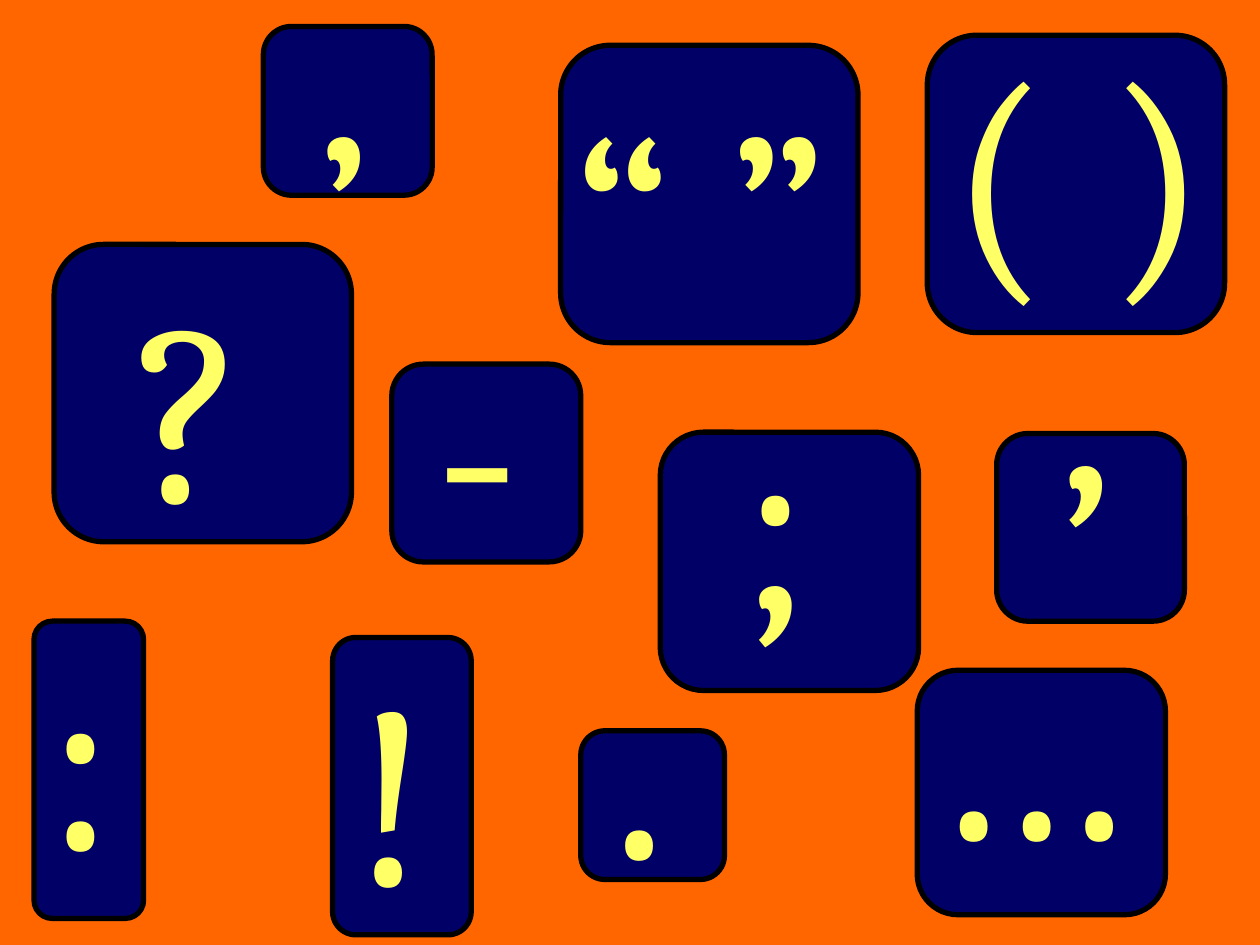
"""Build a slide of punctuation marks on rounded cards."""
from dataclasses import dataclass

from pptx import Presentation
from pptx import util as u
from pptx.dml.color import RGBColor
from pptx.enum import shapes, text


@dataclass(frozen=True)
class Theme:
    """Colours, type and line sizes of the slide."""
    background: str = "FF6600"
    card: str = "000066"
    outline: str = "000000"
    mark: str = "FFFF66"
    font: str = "Cambria"
    mark_size: int = 150
    outline_width: int = 3
    corner: float = 0.167


THEME = Theme()
SLIDE_WIDTH, SLIDE_HEIGHT = u.Inches(10), u.Inches(7.5)
COLUMNS = 100
CELL = SLIDE_WIDTH / COLUMNS
MARK_WIDTH, MARK_HEIGHT = 14.9, 26

# Mark, card (column, row, columns, rows), mark box (column, row, columns)
CARDS = [
    ("!", (26.4, 50.6, 11, 23.6), (27.2, 49, MARK_WIDTH)),
    (".", (46.1, 58, 11.4, 11.8), (47.6, 46.9, MARK_WIDTH)),
    ("’", (20.9, 2.1, 13.4, 13.4), (24, 3.6, MARK_WIDTH)),
    (",", (79.1, 34.4, 14.9, 14.9), (83.1, 17.8, MARK_WIDTH)),
    ("“ ”", (44.5, 3.6, 23.6, 23.6), (44.5, 3.6, 26)),
    ("…", (72.8, 53.2, 19.7, 19.4), (72.8, 45.4, 18.1)),
    ("( )", (73.6, 2.8, 23.6, 23.6), (74.4, 0, 25.6)),
    (":", (2.7, 49.3, 8.7, 23.6), (2.7, 46.2, MARK_WIDTH)),
    (";", (52.4, 34.3, 20.5, 20.5), (57.9, 27.3, MARK_WIDTH)),
    ("-", (31.1, 28.9, 15, 15.7), (33.5, 21.8, MARK_WIDTH)),
    ("?", (4.3, 19.4, 23.6, 23.6), (9.8, 18.6, MARK_WIDTH)),
]


def colour(name):
    """Return the RGB colour of a hex value."""
    return RGBColor.from_string(name)


def cells(*lengths):
    """Turn grid lengths into slide lengths."""
    return [u.Emu(round(length * CELL)) for length in lengths]


def paint_background(slide):
    """Fill the slide with the background colour."""
    fill = slide.background.fill
    fill.solid()
    fill.fore_color.rgb = colour(THEME.background)


def add_card(group, area):
    """Add a rounded, outlined card to a group."""
    shape = group.shapes.add_shape(
        shapes.MSO_SHAPE.ROUNDED_RECTANGLE, *cells(*area))
    shape.adjustments[0] = THEME.corner
    shape.shadow.inherit = False
    shape.fill.solid()
    shape.fill.fore_color.rgb = colour(THEME.card)
    shape.line.color.rgb = colour(THEME.outline)
    shape.line.width = u.Pt(THEME.outline_width)


def add_mark(group, mark, column, row, width):
    """Add a large punctuation mark to a group."""
    box = group.shapes.add_textbox(*cells(column, row, width, MARK_HEIGHT))
    frame = box.text_frame
    frame.word_wrap = True
    frame.auto_size = text.MSO_AUTO_SIZE.SHAPE_TO_FIT_TEXT
    run = frame.paragraphs[0].add_run()
    run.text = mark
    run.font.name = THEME.font
    run.font.size = u.Pt(THEME.mark_size)
    run.font.color.rgb = colour(THEME.mark)


def main():
    """Build and save the presentation."""
    presentation = Presentation()
    presentation.slide_width = SLIDE_WIDTH
    presentation.slide_height = SLIDE_HEIGHT
    slide = presentation.slides.add_slide(presentation.slide_layouts[6])
    paint_background(slide)
    for mark, card_area, mark_area in CARDS:
        group = slide.shapes.add_group_shape()
        add_card(group, card_area)
        add_mark(group, mark, *mark_area)
    presentation.save("out.pptx")


if __name__ == "__main__":
    main()
